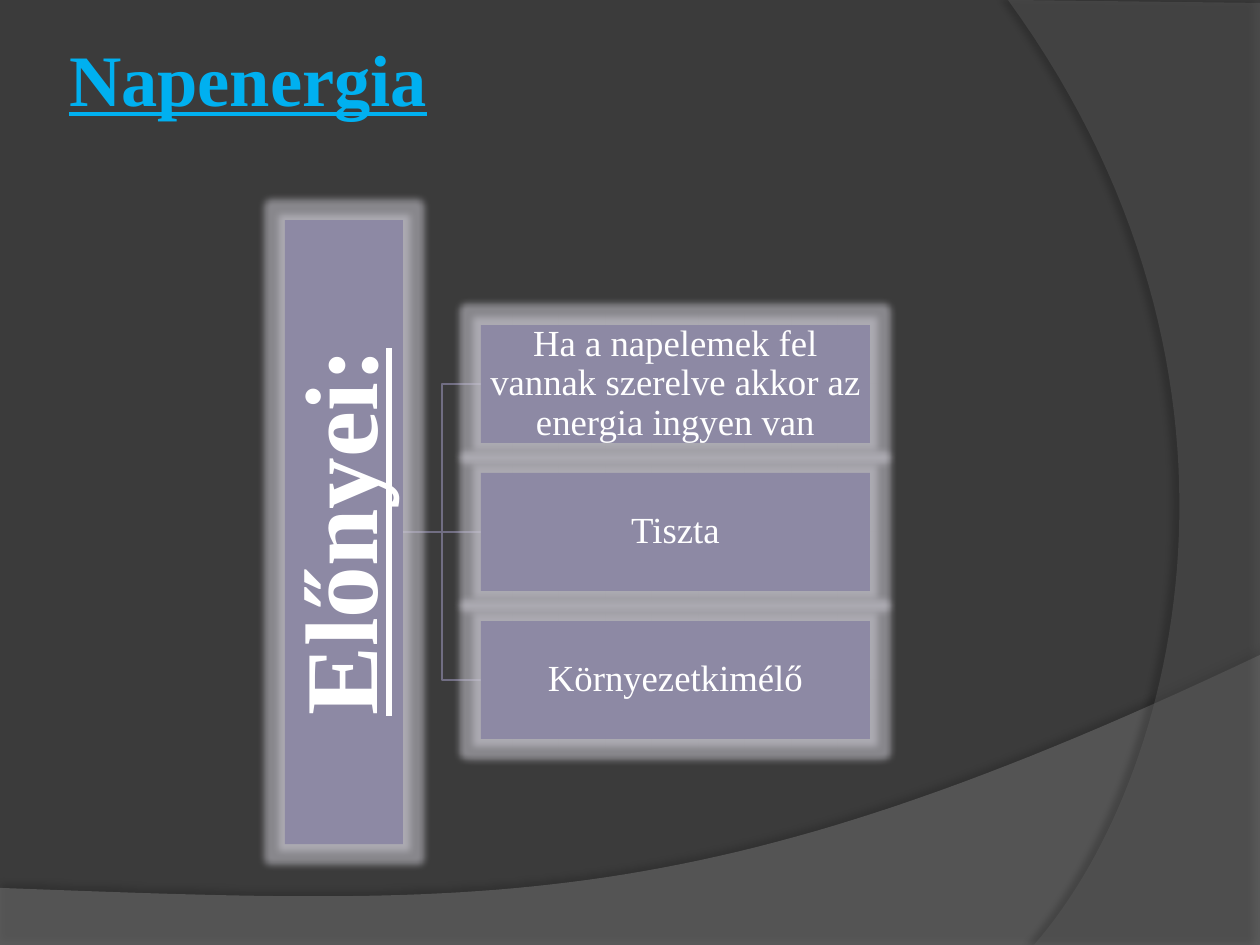
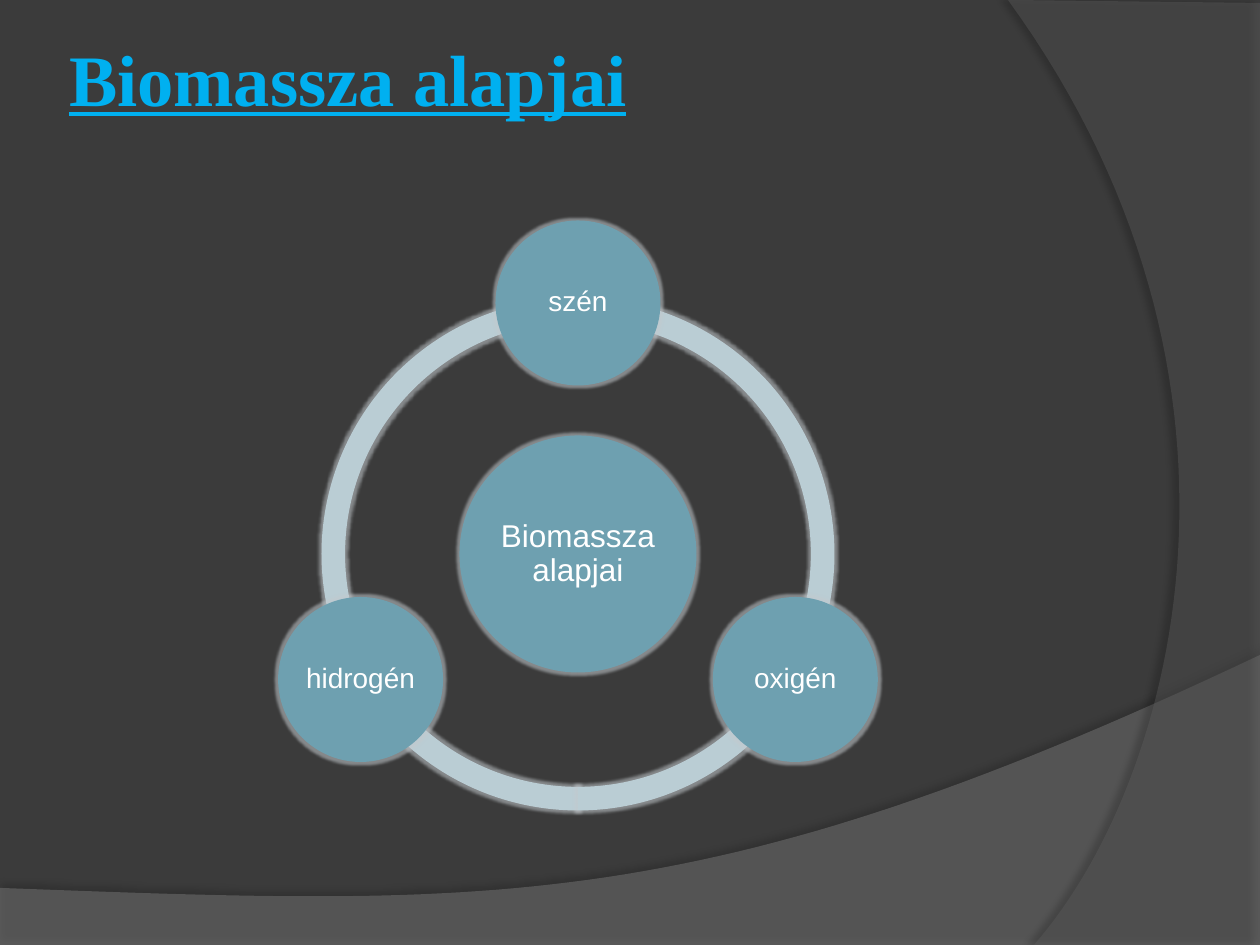
"""Builds two slides on energy: solar advantages and the basics of biomass."""
from math import cos, radians, sin

from lxml import etree
from pptx import Presentation
from pptx import util as u
from pptx.dml.color import RGBColor
from pptx.enum import shapes, text
from pptx.oxml import ns

SOLAR_TITLE = "Napenergia"
SOLAR_HEADING = "Előnyei:"
ADVANTAGES = [
    "Ha a napelemek fel vannak szerelve akkor az energia ingyen van",
    "Tiszta",
    "Környezetkimélő",
]
BIOMASS_TITLE = "Biomassza alapjai"
BIOMASS_HUB = "Biomassza alapjai"
ELEMENTS = ["szén", "oxigén", "hidrogén"]

BACKGROUND = RGBColor(0x3B, 0x3B, 0x3B)
WAVE = RGBColor(0x7F, 0x7F, 0x7F)
SIDE = RGBColor(0x5E, 0x5E, 0x5E)
BLACK = RGBColor(0x00, 0x00, 0x00)
WHITE = RGBColor(0xFF, 0xFF, 0xFF)
TITLE_BLUE = RGBColor(0x00, 0xB0, 0xF0)
PURPLE = RGBColor(0x8D, 0x89, 0xA4)
PURPLE_LINE = RGBColor(0x71, 0x6E, 0x83)
PURPLE_GLOW = RGBColor(0xC9, 0xC7, 0xD0)
TEAL = RGBColor(0x6E, 0xA0, 0xB0)
RING = RGBColor(0xBA, 0xCD, 0xD4)
TEAL_GLOW = RGBColor(0xC4, 0xCA, 0xCE)

SERIF, SANS = "Times New Roman", "Arial"
SLIDE_WIDTH, SLIDE_HEIGHT = 1260, 945
CURVE_STEPS = 60

BANDS = [
    dict(corners=[(0, 945), (1260, 945)],
         curve=[(1260, 655), (704, 919), (493, 906), (0, 888)],
         color=WAVE, alpha=45, shadow_alpha=35, distance=3.5, direction=270),
    dict(corners=[(1260, 3), (1260, 945)],
         curve=[(1034, 945), (1178, 780), (1283, 378), (1008, 0)],
         color=SIDE, alpha=40, shadow_alpha=45, distance=4, direction=180),
]


def px(length):
    return u.Emu(round(length * 914400 / 126))


def box(left, top, width, height):
    return px(left), px(top), px(width), px(height)


def add_color(parent, color, alpha):
    element = etree.SubElement(parent, ns.qn("a:srgbClr"), val=str(color))
    etree.SubElement(element, ns.qn("a:alpha"), val=str(alpha * 1000))


def add_effect(shape, name, color, alpha, **attributes):
    shape.shadow.inherit = False
    effects = shape._element.spPr.find(ns.qn("a:effectLst"))
    values = {key: str(int(value)) for key, value in attributes.items()}
    add_color(etree.SubElement(effects, ns.qn(name), values), color, alpha)


def paint(shape, color):
    shape.fill.solid()
    shape.fill.fore_color.rgb = color
    shape.line.fill.background()


def write(shape, content, font, size, color, inset=0, bold_underlined=False,
          align=text.PP_ALIGN.CENTER, anchor=text.MSO_ANCHOR.MIDDLE):
    frame = shape.text_frame
    frame.text = content
    frame.word_wrap = True
    frame.vertical_anchor = anchor
    frame.margin_left = frame.margin_right = px(inset)
    frame.margin_top = frame.margin_bottom = 0
    paragraph = frame.paragraphs[0]
    paragraph.alignment = align
    paragraph.line_spacing = 0.9 if align == text.PP_ALIGN.CENTER else 1.0
    run_font = paragraph.runs[0].font
    run_font.name, run_font.size = font, u.Pt(size)
    run_font.color.rgb = color
    run_font.bold = run_font.underline = bold_underlined


def bezier(points):
    for step in range(CURVE_STEPS + 1):
        t = step / CURVE_STEPS
        weights = ((1 - t) ** 3, 3 * t * (1 - t) ** 2, 3 * t * t * (1 - t), t ** 3)
        yield tuple(sum(w * p[axis] for w, p in zip(weights, points)) for axis in (0, 1))


def add_band(slide, band):
    outline = band["corners"] + list(bezier(band["curve"]))
    start, *rest = [(px(x), px(y)) for x, y in outline]
    builder = slide.shapes.build_freeform(*start)
    builder.add_line_segments(rest, close=True)
    shape = builder.convert_to_shape()
    paint(shape, band["color"])
    color = shape._element.spPr.find(ns.qn("a:solidFill"))[0]
    etree.SubElement(color, ns.qn("a:alpha"), val=str(band["alpha"] * 1000))
    add_effect(shape, "a:outerShdw", BLACK, band["shadow_alpha"], blurRad=u.Pt(4),
               dist=u.Pt(band["distance"]), dir=band["direction"] * 60000)


def add_titled_slide(presentation, title):
    slide = presentation.slides.add_slide(presentation.slide_layouts[6])
    for band in BANDS:
        add_band(slide, band)
    title_box = slide.shapes.add_textbox(*box(63, 34, 1029, 158))
    write(title_box, title, SERIF, 41.4, TITLE_BLUE, 6, True,
          text.PP_ALIGN.LEFT, text.MSO_ANCHOR.TOP)
    return slide


def add_glowing(slide, kind, area, color, glow, radius):
    shape = slide.shapes.add_shape(kind, *box(*area))
    paint(shape, color)
    add_effect(shape, "a:glow", glow, 55, rad=u.Pt(radius))
    return shape


def add_branch(slide, start, end):
    kind = shapes.MSO_CONNECTOR.STRAIGHT if start[1] == end[1] else shapes.MSO_CONNECTOR.ELBOW
    connector = slide.shapes.add_connector(kind, *map(px, start + end))
    connector.line.color.rgb = PURPLE_LINE
    connector.line.width = u.Pt(1.5)
    etree.SubElement(connector._element.spPr, ns.qn("a:effectLst"))


def build_solar(presentation):
    slide = add_titled_slide(presentation, SOLAR_TITLE)
    root_x, middle_y, root_length, thickness = 344, 532, 624, 118
    branch_x, branch_width, pitch = 481, 389, 148
    rows = [middle_y + (index - (len(ADVANTAGES) - 1) / 2) * pitch
            for index in range(len(ADVANTAGES))]
    for row in rows:
        add_branch(slide, (root_x + thickness / 2, middle_y), (branch_x, row))

    def add_block(area, *style):
        block = add_glowing(slide, shapes.MSO_SHAPE.RECTANGLE, area, PURPLE, PURPLE_GLOW, 8)
        write(block, *style)
        return block

    root = add_block((root_x - root_length / 2, middle_y - thickness / 2, root_length, thickness),
                     SOLAR_HEADING, SERIF, 59, WHITE, 5, True)
    root.rotation = 270
    for advantage, row in zip(ADVANTAGES, rows):
        add_block((branch_x, row - thickness / 2, branch_width, thickness),
                  advantage, SERIF, 21, WHITE, 1)


def build_biomass(presentation):
    slide = add_titled_slide(presentation, BIOMASS_TITLE)
    center_x, center_y, orbit = 578, 554, 251
    ring_size, hub_size, node_size = 513, 237, 165

    def add_round(kind, x, y, size, color):
        area = (x - size / 2, y - size / 2, size, size)
        return add_glowing(slide, kind, area, color, TEAL_GLOW, 3)

    for start, end in [(90, 162), (18, 90), (162, 18)]:
        arc = add_round(shapes.MSO_SHAPE.BLOCK_ARC, center_x, center_y, ring_size, RING)
        for index, value in enumerate((start * 0.6, end * 0.6, 0.046)):
            arc.adjustments[index] = value

    circles = [(BIOMASS_HUB, center_x, center_y, hub_size, 18)]
    for index, element in enumerate(ELEMENTS):
        angle = radians(index * 360 / len(ELEMENTS) - 90)
        circles.append((element, center_x + orbit * cos(angle),
                        center_y + orbit * sin(angle), node_size, 16))
    for label, x, y, size, font_size in circles:
        circle = add_round(shapes.MSO_SHAPE.OVAL, x, y, size, TEAL)
        write(circle, label, SANS, font_size, WHITE, 2)


def main():
    presentation = Presentation()
    presentation.slide_width, presentation.slide_height = px(SLIDE_WIDTH), px(SLIDE_HEIGHT)
    background = presentation.slide_master.background.fill
    background.solid()
    background.fore_color.rgb = BACKGROUND
    build_solar(presentation)
    build_biomass(presentation)
    presentation.save("out.pptx")


if __name__ == "__main__":
    main()
